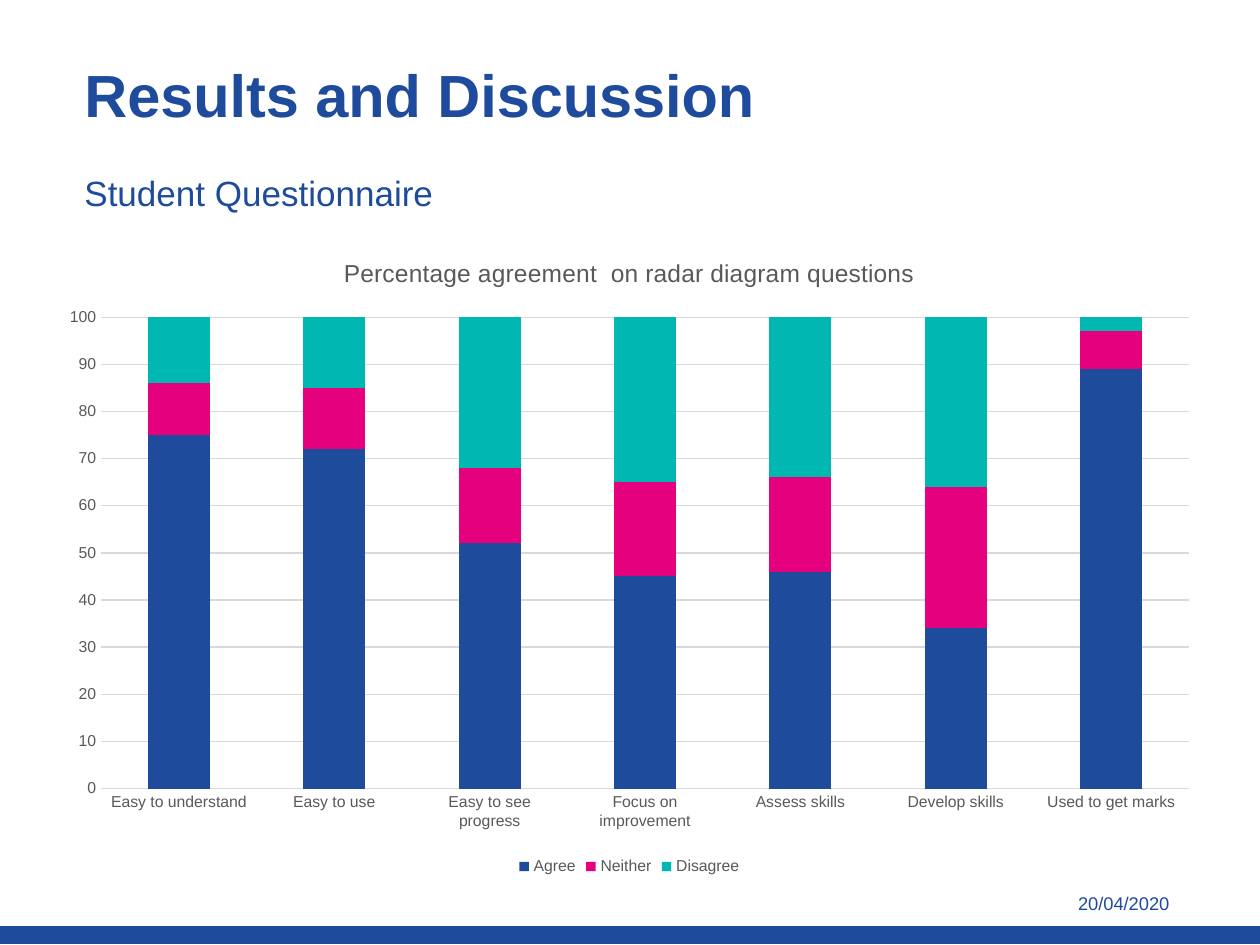
import pptx
import pptx.chart.data
import pptx.dml.color
import pptx.enum.chart
import pptx.enum.shapes
import pptx.enum.text
import pptx.util
from pptx.util import Inches

BLUE, PINK, TEAL, GREY, GRID = "1E4B9B", "E5007D", "00B7B2", "595959", "D9D9D9"
ANCHOR = pptx.enum.text.MSO_ANCHOR
ALIGN = pptx.enum.text.PP_ALIGN


def rgb(value):
    return pptx.dml.color.RGBColor.from_string(value)


def apply(obj, values):
    for name, value in values.items():
        setattr(obj, name, value)


class Deck:
    """Holds the style and the current slide, and draws each kind of element."""

    font = "Arial"

    def __init__(self, prs):
        self.s = prs.slides.add_slide(prs.slide_layouts[1])

    def style(self, font, size, color, bold=False):
        apply(font, {"name": self.font, "size": pptx.util.Pt(size), "bold": bold})
        font.color.rgb = rgb(color)

    def place(self, sp, box):
        apply(sp, dict(zip(("left", "top", "width", "height"), map(Inches, box))))

    def fill_text(self, sp, text, size, frame, paragraph, bold=False):
        tf = sp.text_frame
        tf.text = text
        apply(tf, {"word_wrap": True, "auto_size": pptx.enum.text.MSO_AUTO_SIZE.NONE, **frame})
        p = tf.paragraphs[0]
        apply(p, {"space_before": pptx.util.Pt(0), **paragraph})
        self.style(p.runs[0].font, size, BLUE, bold)
        return p

    def placeholder(self, index, box, text, size, top_inset, anchor, spacing, bold=False):
        sp = self.s.placeholders[index]
        self.place(sp, box)
        frame = {"margin_left": Inches(0.04), "margin_right": Inches(0.02),
                 "margin_top": Inches(top_inset), "margin_bottom": Inches(0.04),
                 "vertical_anchor": anchor}
        p = self.fill_text(sp, text, size, frame,
                           {"alignment": ALIGN.LEFT, "line_spacing": spacing}, bold)
        pPr = p._p.get_or_add_pPr()
        pPr.set("marL", "0")
        pPr.set("indent", "0")
        pPr.append(pptx.oxml.parse_xml(
            '<a:buNone xmlns:a="http://schemas.openxmlformats.org/drawingml/2006/main"/>'))

    def text(self, box, text, size):
        sp = self.s.shapes.add_textbox(*map(Inches, box))
        self.fill_text(sp, text, size, {}, {"alignment": ALIGN.RIGHT})

    def bar(self, box):
        sp = self.s.shapes.add_shape(pptx.enum.shapes.MSO_SHAPE.RECTANGLE, *map(Inches, box))
        sp.shadow.inherit = False
        sp.fill.solid()
        sp.fill.fore_color.rgb = rgb(BLUE)
        sp.line.color.rgb = rgb(BLUE)
        sp.line.width = pptx.util.Pt(1)

    def rule(self, line):
        line.color.rgb = rgb(GRID)
        line.width = pptx.util.Pt(0.75)

    def chart(self, box, title, categories, series):
        enum = pptx.enum.chart
        data = pptx.chart.data.CategoryChartData()
        data.categories = categories
        for name, _, values in series:
            data.add_series(name, values)
        chart = self.s.shapes.add_chart(
            enum.XL_CHART_TYPE.COLUMN_STACKED, *map(Inches, box), data).chart
        self.style(chart.font, 10, "000000")

        chart.has_title = True
        tf = chart.chart_title.text_frame
        tf.text = title
        self.style(tf.paragraphs[0].runs[0].font, 14, GREY)

        chart.has_legend = True
        apply(chart.legend, {"position": enum.XL_LEGEND_POSITION.BOTTOM,
                             "include_in_layout": False})
        self.style(chart.legend.font, 9, GREY)

        for axis in (chart.category_axis, chart.value_axis):
            apply(axis, {"major_tick_mark": enum.XL_TICK_MARK.NONE,
                         "minor_tick_mark": enum.XL_TICK_MARK.NONE})
            self.style(axis.tick_labels.font, 9, GREY)
        self.rule(chart.category_axis.format.line)
        apply(chart.value_axis, {"minimum_scale": 0, "maximum_scale": 100, "major_unit": 10,
                                 "has_major_gridlines": True})
        chart.value_axis.format.line.fill.background()
        self.rule(chart.value_axis.major_gridlines.format.line)

        plot = chart.plots[0]
        apply(plot, {"gap_width": 150, "overlap": 100, "vary_by_categories": False})
        for ser, (_, color, _) in zip(plot.series, series):
            ser.format.fill.solid()
            ser.format.fill.fore_color.rgb = rgb(color)


def main():
    prs = pptx.Presentation()
    apply(prs, {"slide_width": Inches(10), "slide_height": Inches(7.5)})
    deck = Deck(prs)
    deck.bar((0, 7.36, 10, 0.13))
    deck.text((8.3, 7.03, 1.08, 0.28), "20/04/2020", 10.5)
    deck.placeholder(0, (0.63, 0.51, 6.52, 0.96), "Results and Discussion",
                     34, 0.04, ANCHOR.TOP, 0.85, True)
    deck.placeholder(1, (0.63, 1.17, 6.52, 0.59), "Student Questionnaire",
                     20, 0.16, ANCHOR.MIDDLE, 1.0)
    deck.chart(
        (0.37, 1.85, 9.25, 5.14),
        "Percentage agreement  on radar diagram questions",
        ["Easy to understand", "Easy to use", "Easy to see progress", "Focus on improvement",
         "Assess skills", "Develop skills", "Used to get marks"],
        [("Agree", BLUE, (75, 72, 52, 45, 46, 34, 89)),
         ("Neither", PINK, (11, 13, 16, 20, 20, 30, 8)),
         ("Disagree", TEAL, (14, 15, 32, 36, 35, 36, 4))])
    prs.save("out.pptx")


if __name__ == "__main__":
    main()
